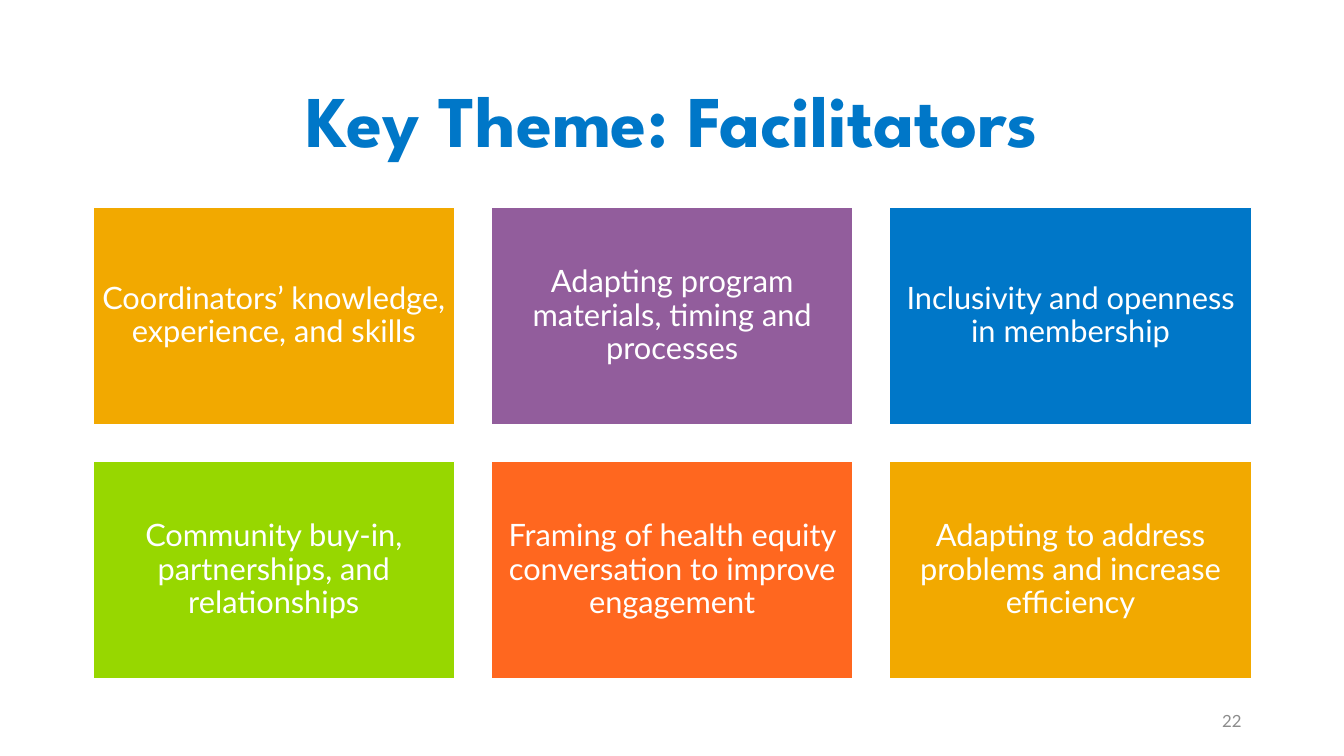
import pptx
import pptx.util
import pptx.dml.color
import pptx.enum.shapes
import pptx.enum.text

Cm = pptx.util.Cm
Pt = pptx.util.Pt
RGBColor = pptx.dml.color.RGBColor
Align = pptx.enum.text.PP_ALIGN

AMBER = RGBColor(0xF2, 0xA9, 0x00)
PURPLE = RGBColor(0x92, 0x5D, 0x9C)
BLUE = RGBColor(0x00, 0x77, 0xC8)
GREEN = RGBColor(0x97, 0xD7, 0x00)
ORANGE = RGBColor(0xFF, 0x67, 0x1F)
WHITE = RGBColor(0xFF, 0xFF, 0xFF)
GREY = RGBColor(0x8C, 0x8C, 0x8C)

TITLE = "Key Theme: Facilitators"
PAGE_NUMBER = "22"
FACILITATORS = [
    ("Coordinators’ knowledge, experience, and skills", AMBER),
    ("Adapting program materials, timing and processes", PURPLE),
    ("Inclusivity and openness in membership", BLUE),
    ("Community buy-in, partnerships, and relationships", GREEN),
    ("Framing of health equity conversation to improve engagement", ORANGE),
    ("Adapting to address problems and increase efficiency", AMBER),
]

COLUMNS = 3
LEFT, TOP = 2.34, 5.23
CARD_WIDTH, CARD_HEIGHT = 9.12, 5.48
GAP = 0.92
CARD_INSET = Cm(0.23)


def write(box, text, font, size, color, align, spacing=1.0, bold=False):
    frame = box.text_frame
    frame.word_wrap = True
    frame.vertical_anchor = pptx.enum.text.MSO_ANCHOR.MIDDLE
    para = frame.paragraphs[0]
    para.text = text
    para.alignment = align
    para.line_spacing = spacing
    para.font.name = font
    para.font.size = Pt(size)
    para.font.bold = bold
    para.font.color.rgb = color


def add_card(page, index, text, color):
    row, column = divmod(index, COLUMNS)
    card = page.shapes.add_shape(
        pptx.enum.shapes.MSO_SHAPE.RECTANGLE,
        Cm(LEFT + column * (CARD_WIDTH + GAP)),
        Cm(TOP + row * (CARD_HEIGHT + GAP)),
        Cm(CARD_WIDTH), Cm(CARD_HEIGHT))
    card.shadow.inherit = False
    card.fill.solid()
    card.fill.fore_color.rgb = color
    card.line.color.rgb = WHITE
    card.line.width = Pt(1)
    frame = card.text_frame
    frame.margin_left = frame.margin_right = CARD_INSET
    frame.margin_top = frame.margin_bottom = CARD_INSET
    write(card, text, "Lato", 22, WHITE, Align.CENTER, 0.9)


def main():
    deck = pptx.Presentation()
    deck.slide_width, deck.slide_height = Cm(33.87), Cm(19.05)
    page = deck.slides.add_slide(deck.slide_layouts[6])

    title = page.shapes.add_textbox(Cm(LEFT), Cm(1.55), Cm(29.2), Cm(3.15))
    write(title, TITLE, "League Spartan", 52, BLUE, Align.CENTER, 0.9, True)

    for index, (text, color) in enumerate(FACILITATORS):
        add_card(page, index, text, color)

    number = page.shapes.add_textbox(Cm(23.92), Cm(17.65), Cm(7.62), Cm(1.02))
    write(number, PAGE_NUMBER, "Lato", 12, GREY, Align.RIGHT)

    deck.save("out.pptx")


if __name__ == "__main__":
    main()
